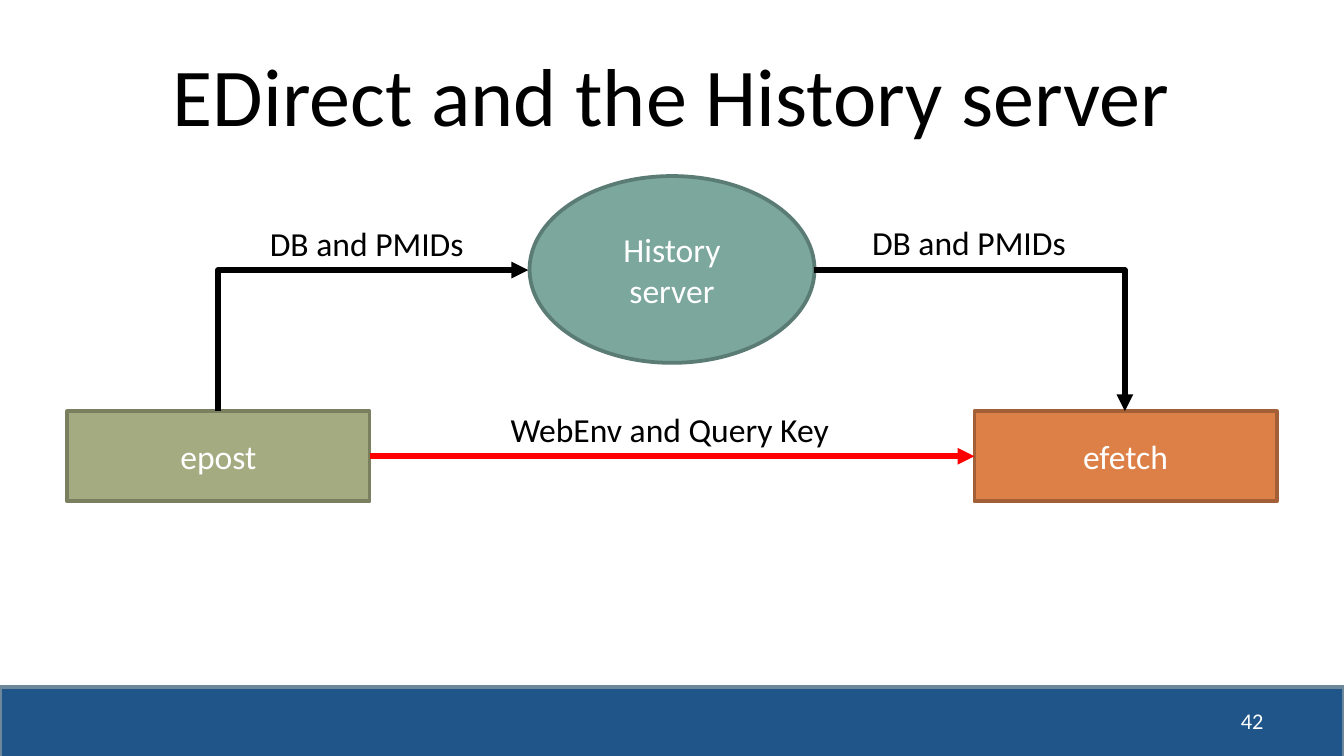
from dataclasses import dataclass

import pptx
import pptx.dml.color
import pptx.enum.shapes
import pptx.enum.text
import pptx.oxml.ns
import pptx.shapes.autoshape
import pptx.shapes.connector
import pptx.slide
import pptx.text.text
import pptx.util

Inches = pptx.util.Inches
RGBColor = pptx.dml.color.RGBColor
Kind = pptx.enum.shapes.MSO_SHAPE
Link = pptx.enum.shapes.MSO_CONNECTOR
Align = pptx.enum.text.PP_ALIGN
Anchor = pptx.enum.text.MSO_ANCHOR
qn = pptx.oxml.ns.qn

FONT = "Calibri"
BLACK = RGBColor(0x00, 0x00, 0x00)
WHITE = RGBColor(0xFF, 0xFF, 0xFF)
RED = RGBColor(0xFF, 0x00, 0x00)
BLUE = RGBColor(0x20, 0x55, 0x8A)
SLATE = RGBColor(0x6D, 0x87, 0x9B)
OLIVE = RGBColor(0xA5, 0xAB, 0x81)
MOSS = RGBColor(0x7A, 0x7F, 0x5F)
ORANGE = RGBColor(0xDD, 0x80, 0x47)
RUST = RGBColor(0xA3, 0x5F, 0x35)
TEAL = RGBColor(0x7B, 0xA7, 0x9D)
PINE = RGBColor(0x5B, 0x7C, 0x74)


@dataclass
class Area:
    left: float
    top: float
    width: float
    height: float

    def inches(self) -> list[pptx.util.Length]:
        return [Inches(v) for v in (self.left, self.top, self.width, self.height)]


@dataclass
class Node:
    area: Area
    fill: RGBColor
    edge: RGBColor
    lines: tuple[str, ...] = ()
    kind: Kind = Kind.RECTANGLE


@dataclass
class Label:
    area: Area
    text: str
    size: int = 18
    color: RGBColor = BLACK
    align: Align = Align.LEFT
    anchor: Anchor = Anchor.TOP


def write(frame: pptx.text.text.TextFrame, lines: tuple[str, ...], size: int,
          color: RGBColor, align: Align, anchor: Anchor) -> None:
    frame.word_wrap = True
    frame.vertical_anchor = anchor
    for i, line in enumerate(lines):
        para = frame.add_paragraph() if i else frame.paragraphs[0]
        para.alignment = align
        run = para.add_run()
        run.text = line
        run.font.name = FONT
        run.font.size = pptx.util.Pt(size)
        run.font.color.rgb = color


def draw_node(slide: pptx.slide.Slide, node: Node) -> pptx.shapes.autoshape.Shape:
    shape = slide.shapes.add_shape(node.kind, *node.area.inches())
    shape.shadow.inherit = False
    shape.fill.solid()
    shape.fill.fore_color.rgb = node.fill
    shape.line.color.rgb = node.edge
    shape.line.width = pptx.util.Pt(2)
    write(shape.text_frame, node.lines, 18, WHITE, Align.CENTER, Anchor.MIDDLE)
    return shape


def draw_label(slide: pptx.slide.Slide, label: Label) -> None:
    box = slide.shapes.add_textbox(*label.area.inches())
    write(box.text_frame, (label.text,), label.size, label.color, label.align, label.anchor)


def draw_arrow(slide: pptx.slide.Slide, kind: Link, area: Area,
               color: RGBColor) -> pptx.shapes.connector.Connector:
    left, top, width, height = area.inches()
    arrow = slide.shapes.add_connector(kind, left, top, left + width, top + height)
    arrow.line.color.rgb = color
    arrow.line.width = pptx.util.Pt(3)
    frame = arrow._element.spPr
    line = frame.find(qn("a:ln"))
    line.append(line.makeelement(qn("a:tailEnd"), {"type": "triangle"}))
    frame.append(frame.makeelement(qn("a:effectLst"), {}))
    return arrow


def draw_bend(slide: pptx.slide.Slide, area: Area, turned: bool = False) -> None:
    arrow = draw_arrow(slide, Link.ELBOW, area, BLACK)
    frame = arrow._element.spPr
    frame.find(qn("a:prstGeom")).set("prst", "bentConnector2")
    if turned:
        place = frame.find(qn("a:xfrm"))
        place.set("rot", "5400000")
        place.set("flipH", "1")
        place.set("flipV", "1")


def main() -> None:
    deck = pptx.Presentation()
    deck.slide_width = Inches(10)
    deck.slide_height = deck.slide_width * 9 // 16
    slide = deck.slides.add_slide(deck.slide_layouts[6])

    draw_node(slide, Node(Area(0, 5.11, 10, 0.58), BLUE, SLATE))
    post = draw_node(slide, Node(Area(0.5, 3.06, 2.25, 0.67), OLIVE, MOSS, ("epost",)))
    fetch = draw_node(slide, Node(Area(7.25, 3.06, 2.25, 0.67), ORANGE, RUST, ("efetch",)))
    draw_node(slide, Node(Area(3.94, 1.31, 2.12, 1.39), TEAL, PINE,
                          ("History", "server"), Kind.OVAL))

    direct = draw_arrow(slide, Link.STRAIGHT, Area(2.75, 3.4, 4.5, 0), RED)
    direct.begin_connect(post, 3)
    direct.end_connect(fetch, 1)
    draw_bend(slide, Area(2.25, 1.38, 1.05, 2.31), turned=True)
    draw_bend(slide, Area(6.06, 2.01, 2.31, 1.05))

    for label in (
        Label(Area(0.5, 0.23, 9, 0.94), "EDirect and the History server", 44,
              align=Align.CENTER, anchor=Anchor.MIDDLE),
        Label(Area(1.91, 1.61, 1.74, 0.4), "DB and PMIDs"),
        Label(Area(6.39, 1.6, 1.67, 0.4), "DB and PMIDs"),
        Label(Area(3.7, 2.99, 2.59, 0.4), "WebEnv and Query Key"),
        Label(Area(7.17, 5.21, 2.33, 0.3), "42", 12, WHITE, Align.RIGHT, Anchor.MIDDLE),
    ):
        draw_label(slide, label)

    deck.save("out.pptx")


if __name__ == "__main__":
    main()
